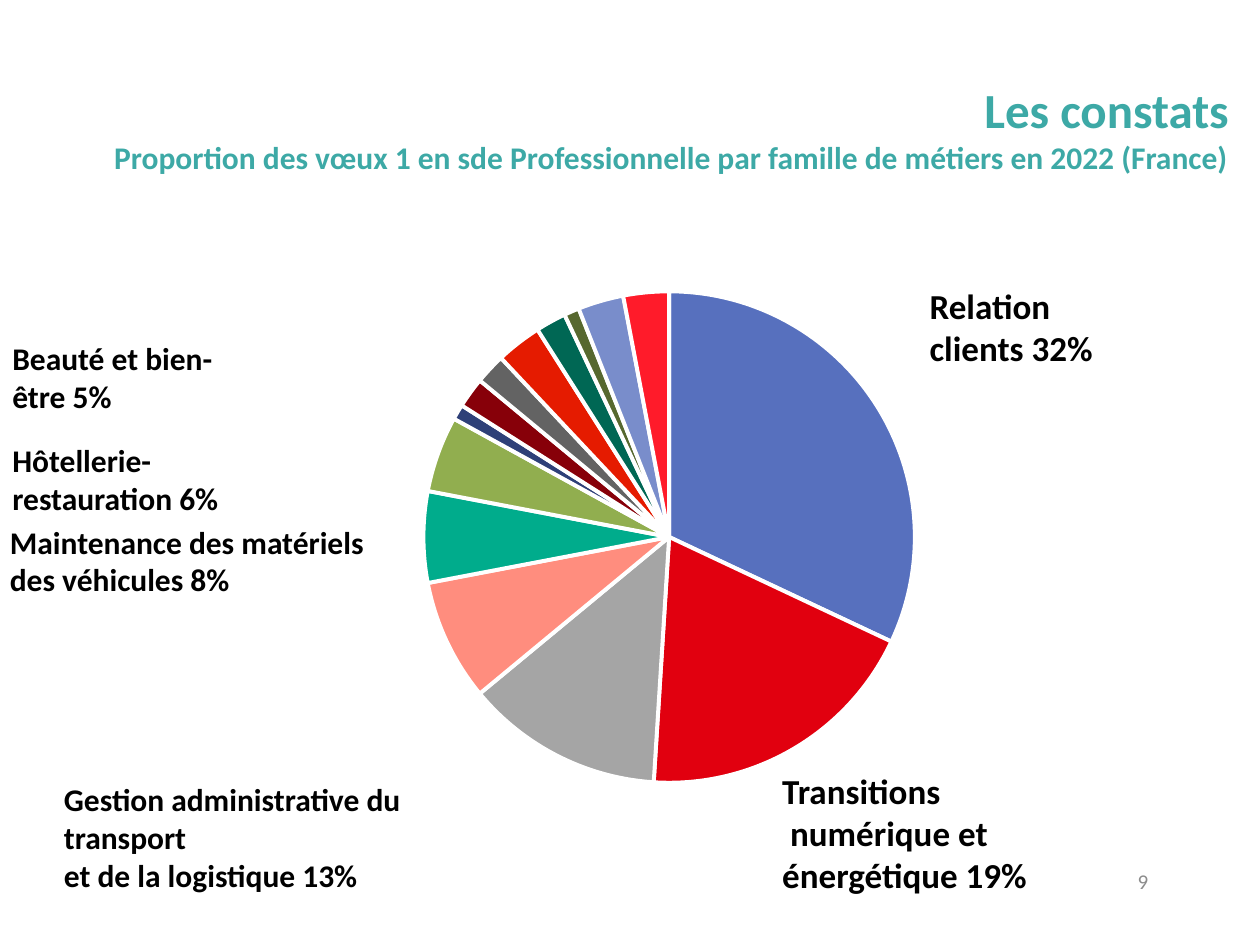
from dataclasses import dataclass

from lxml.etree import SubElement
from pptx import Presentation
from pptx.chart.data import CategoryChartData
from pptx.dml.color import RGBColor
from pptx.enum.chart import XL_CHART_TYPE
from pptx.enum.text import MSO_ANCHOR, MSO_AUTO_SIZE, PP_ALIGN
from pptx.oxml.ns import qn
from pptx.util import Cm, Pt


@dataclass(frozen=True)
class Theme:
    font: str = "Calibri"
    title: str = "3DA9A6"
    text: str = "000000"
    muted: str = "8C8C8C"
    white: str = "FFFFFF"
    title_size: int = 28
    large_size: int = 20
    body_size: int = 18
    number_size: int = 12
    chart_size: int = 10


THEME = Theme()

# Share of first choices in percent, with the slice colour
SLICES = [
    (32, "5770BE"), (19, "E1000F"), (13, "A5A5A5"), (8, "FF8D7E"),
    (6, "00AC8C"), (5, "91AE4F"), (1, "2E4078"), (2, "870009"),
    (2, "636363"), (3, "E51B00"), (2, "006754"), (1, "57682F"),
    (3, "798DCB"), (3, "FF1B2A"),
]

# Text, size and box (left, top, width, height in cm) of each family label
LABELS = [
    ("Beauté et bien-être 5%", THEME.body_size, (0, 6.71, 4.85, 0.94)),
    ("Hôtellerie-restauration 6%", THEME.body_size, (0, 8.76, 5.54, 0.94)),
    ("Gestion administrative du transport\net de la logistique 13%",
     THEME.body_size, (1.04, 15.6, 7.34, 1.65)),
    ("Transitions\n numérique et énergétique 19%",
     THEME.large_size, (15.52, 15.39, 7.24, 1.8)),
    ("Relation clients 32%", THEME.large_size, (18.49, 5.61, 4.72, 1.02)),
    ("Maintenance des matériels \ndes véhicules 8%",
     THEME.body_size, (-0.05, 10.41, 12.7, 1.8)),
]


def style_font(font, size, color, bold=False):
    font.name = THEME.font
    font.size = Pt(size)
    font.bold = bold
    font.color.rgb = RGBColor.from_string(color)


def add_text_frame(slide, box):
    shape = slide.shapes.add_textbox(*(Cm(length) for length in box))
    shape.text_frame.word_wrap = True
    return shape.text_frame


def add_title(slide, box):
    frame = add_text_frame(slide, box)
    frame.auto_size = MSO_AUTO_SIZE.SHAPE_TO_FIT_TEXT
    lines = [
        ("Les constats", THEME.title_size),
        ("Proportion des vœux 1 en sde Professionnelle par famille de métiers "
         "en 2022 (France)", THEME.body_size),
    ]
    for index, (text, size) in enumerate(lines):
        paragraph = frame.add_paragraph() if index else frame.paragraphs[0]
        paragraph.text = text
        paragraph.alignment = PP_ALIGN.RIGHT
        style_font(paragraph.font, size, THEME.title, bold=True)


def add_pie(slide, box):
    data = CategoryChartData(number_format="0")
    data.categories = [str(number) for number in range(1, len(SLICES) + 1)]
    data.add_series("Series 1", [value for value, _ in SLICES])
    chart = slide.shapes.add_chart(
        XL_CHART_TYPE.PIE, *(Cm(length) for length in box), data).chart
    chart.has_title = False
    chart.has_legend = False
    style_font(chart.font, THEME.chart_size, THEME.text)

    plot = chart.plots[0]
    plot.vary_by_categories = True
    for index, (_, color) in enumerate(SLICES):
        slice_format = plot.series[0].points[index].format
        slice_format.fill.solid()
        slice_format.fill.fore_color.rgb = RGBColor.from_string(color)
        slice_format.line.color.rgb = RGBColor.from_string(THEME.white)
        slice_format.line.width = Pt(2.25)

    # Fixed plot area inside the chart frame
    plot_area = chart._chartSpace.chart.plotArea
    for old_layout in plot_area.findall(qn("c:layout")):
        plot_area.remove(old_layout)
    layout = SubElement(plot_area, qn("c:layout"))
    plot_area.insert(0, layout)
    manual = SubElement(layout, qn("c:manualLayout"))
    for tag, value in [("layoutTarget", "inner"), ("xMode", "edge"),
                       ("yMode", "edge"), ("x", "0"), ("y", "0.21"),
                       ("w", "1"), ("h", "0.75")]:
        SubElement(manual, qn(f"c:{tag}")).set("val", value)


def add_label(slide, text, size, box):
    frame = add_text_frame(slide, box)
    frame.auto_size = MSO_AUTO_SIZE.SHAPE_TO_FIT_TEXT
    paragraph = frame.paragraphs[0]
    paragraph.text = text
    style_font(paragraph.font, size, THEME.text, bold=True)


def add_page_number(slide, number, box):
    frame = add_text_frame(slide, box)
    frame.vertical_anchor = MSO_ANCHOR.MIDDLE
    paragraph = frame.paragraphs[0]
    paragraph.text = str(number)
    paragraph.alignment = PP_ALIGN.RIGHT
    style_font(paragraph.font, THEME.number_size, THEME.muted)


def main():
    presentation = Presentation()
    presentation.slide_width = Cm(25.4)
    presentation.slide_height = Cm(19.05)
    slide = presentation.slides.add_slide(presentation.slide_layouts[6])

    # Heading and page number
    add_title(slide, (1.91, 1.47, 23.11, 2.24))
    add_page_number(slide, 9, (17.81, 17.3, 5.59, 0.94))

    # Pie with its labels
    add_pie(slide, (4.7, 3.1, 17.58, 13.21))
    for text, size, box in LABELS:
        add_label(slide, text, size, box)

    presentation.save("out.pptx")


if __name__ == "__main__":
    main()
